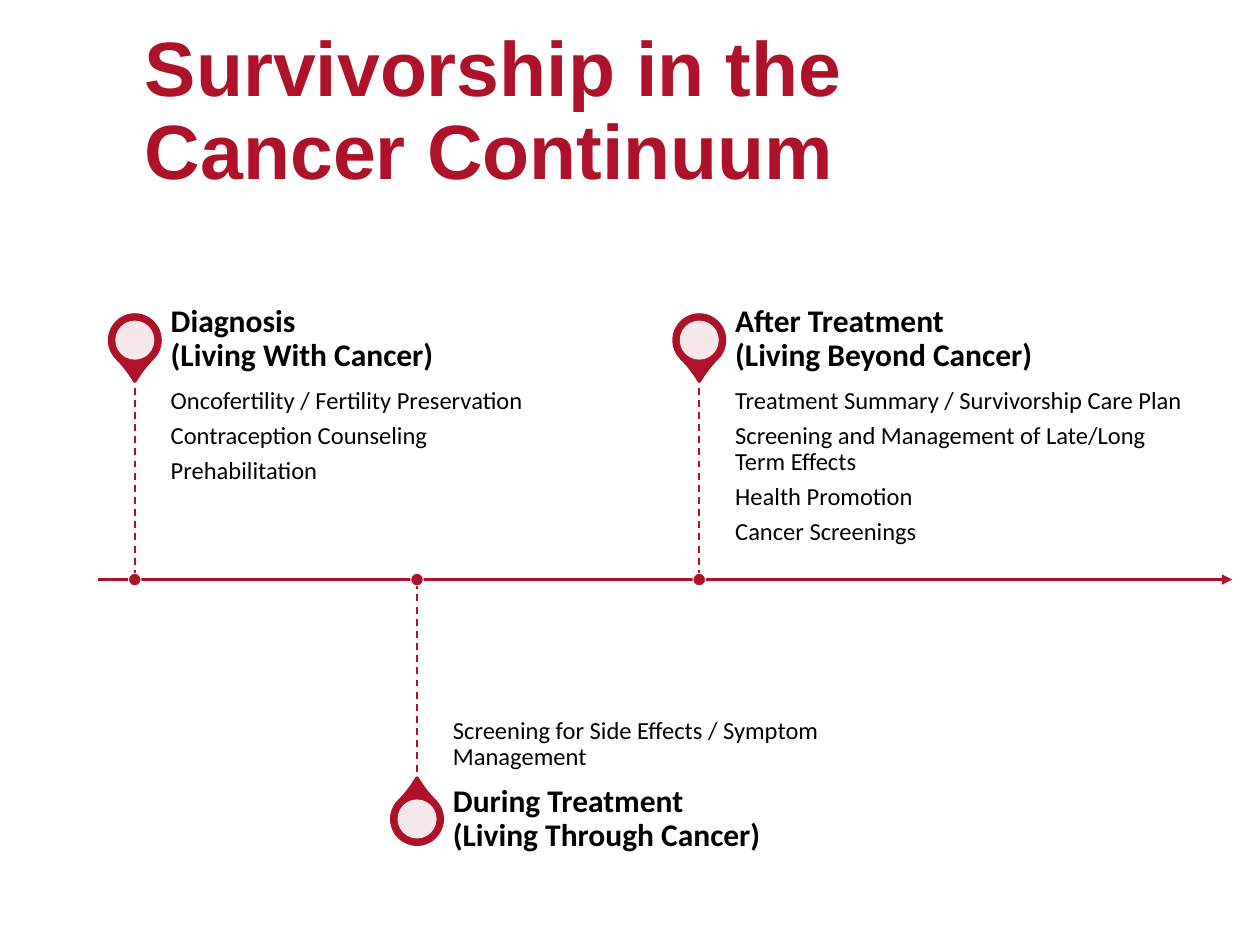
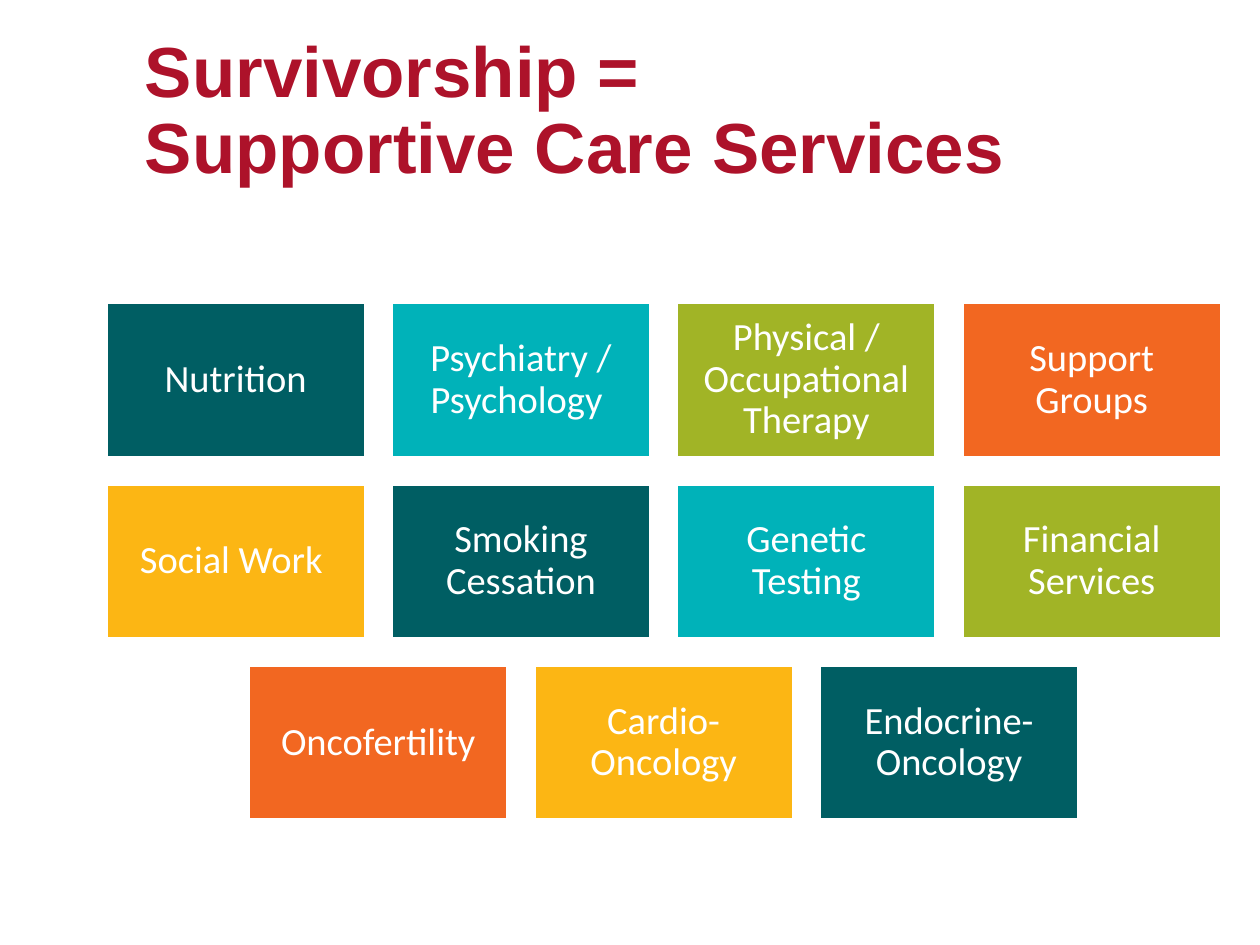
from copy import deepcopy

from lxml import etree
from pptx import Presentation
from pptx.dml.color import RGBColor
from pptx.enum.dml import MSO_LINE
from pptx.enum.shapes import MSO_CONNECTOR, MSO_SHAPE
from pptx.enum.text import MSO_ANCHOR, MSO_AUTO_SIZE, PP_ALIGN
from pptx.oxml.ns import qn
from pptx.util import Inches, Pt

RED = RGBColor(0xAD, 0x12, 0x2A)
WHITE = RGBColor(0xFF, 0xFF, 0xFF)
BLACK = RGBColor(0, 0, 0)
TEAL = RGBColor(0x00, 0x5E, 0x63)
CYAN = RGBColor(0x00, 0xB2, 0xB9)
GREEN = RGBColor(0xA1, 0xB4, 0x26)
ORANGE = RGBColor(0xF2, 0x67, 0x21)
YELLOW = RGBColor(0xFC, 0xB6, 0x14)
TINTS = [TEAL, CYAN, GREEN, ORANGE, YELLOW]

DASH = MSO_LINE.DASH
STRAIGHT = MSO_CONNECTOR.STRAIGHT
RECT, OVAL, TEAR = MSO_SHAPE.RECTANGLE, MSO_SHAPE.OVAL, MSO_SHAPE.TEAR
TOP, MIDDLE, BOTTOM = MSO_ANCHOR.TOP, MSO_ANCHOR.MIDDLE, MSO_ANCHOR.BOTTOM
LEFT, CENTER = PP_ALIGN.LEFT, PP_ALIGN.CENTER

AXIS = 4.6
FIRST, STEP = 1.07, 2.24
STEM, HEAD, WIDE = 1.62, 0.57, 3.74
STAGES = [
    ("Diagnosis\v(Living With Cancer)",
     ["Oncofertility / Fertility Preservation", "Contraception Counseling",
      "Prehabilitation"]),
    ("During Treatment \v(Living Through Cancer)",
     ["Screening for Side Effects / Symptom Management"]),
    ("After Treatment \v(Living Beyond Cancer)",
     ["Treatment Summary / Survivorship Care Plan",
      "Screening and Management of Late/Long Term Effects",
      "Health Promotion", "Cancer Screenings"]),
]

COL, ROW = 2.265, 1.44
TILE = (2.06, 1.23)
SERVICES = [
    ["Nutrition", "Psychiatry / Psychology ", "Physical / Occupational Therapy",
     "Support Groups"],
    ["Social Work ", "Smoking Cessation", "Genetic Testing",
     "Financial Services"],
    ["Oncofertility", "Cardio-Oncology", "Endocrine-Oncology"],
]


def write(frame, text, size, color, font="Calibri", bold=False, align=LEFT,
          anchor=TOP, inset=(0, 0, 0, 0), after=0.35):
    frame.text = text
    frame.word_wrap = True
    frame.auto_size = MSO_AUTO_SIZE.NONE
    frame.vertical_anchor = anchor
    (frame.margin_left, frame.margin_top,
     frame.margin_right, frame.margin_bottom) = map(Inches, inset)
    for para in frame.paragraphs:
        para.alignment = align
        para.line_spacing = 0.9
        para.space_after = Pt(size * after)
        for run in para.runs:
            run.font.name = font
            run.font.size = Pt(size)
            run.font.bold = bold
            run.font.color.rgb = color
        for gap in para._p.findall(qn("a:br")):
            gap.append(deepcopy(para.runs[0].font._element))


def new_slide(deck, title, size, width, height):
    slide = deck.slides.add_slide(deck.slide_layouts[5])
    head = slide.shapes.title
    head.left, head.top = Inches(1.05), Inches(0.43)
    head.width, head.height = Inches(width), Inches(height)
    write(head.text_frame, title, size, RED, "Arial", True, anchor=BOTTOM,
          inset=(0.1, 0, 0.1, 0), after=0)
    return slide


def add_box(slide, x, y, width, height, text, size, **style):
    box = slide.shapes.add_textbox(*map(Inches, (x, y, width, height)))
    write(box.text_frame, text, size, BLACK, **style)


def add_form(slide, kind, x, y, width, height, fill, edge=None, weight=1):
    form = slide.shapes.add_shape(kind, *map(Inches, (x, y, width, height)))
    form.shadow.inherit = False
    form.fill.solid()
    form.fill.fore_color.rgb = fill
    if edge is None:
        form.line.fill.background()
    else:
        form.line.color.rgb = edge
        form.line.width = Pt(weight)
    return form


def add_round(slide, kind, x, y, size, *paint):
    return add_form(slide, kind, x - size / 2, y - size / 2, size, size, *paint)


def add_line(slide, x1, y1, x2, y2, weight):
    line = slide.shapes.add_connector(STRAIGHT, *map(Inches, (x1, y1, x2, y2)))
    line.line.color.rgb = RED
    line.line.width = Pt(weight)
    etree.SubElement(line._element.spPr, qn("a:effectLst"))
    return line


def add_pin(slide, x, y, turn):
    drop = add_round(slide, TEAR, x, y, 0.4, RED, RED, 2)
    drop.adjustments[0] = 1.15
    drop.rotation = turn
    eye = add_round(slide, OVAL, x, y, 0.31, WHITE)
    color = eye.fill._xPr.find(".//" + qn("a:srgbClr"))
    etree.SubElement(color, qn("a:alpha")).set("val", "90000")


def add_stage(slide, x, name, items, above):
    side = -1 if above else 1
    tip = AXIS + side * STEM
    add_pin(slide, x, AXIS + side * 1.9, 135 if above else 315)
    left = x + 0.285
    add_box(slide, left, min(tip, AXIS), WIDE, STEM, "\n".join(items), 14,
            anchor=TOP if above else BOTTOM,
            inset=(0, 0.1, 0.1, 0.15) if above else (0, 0.15, 0, 0.1))
    add_box(slide, left, tip - HEAD if above else tip, WIDE, HEAD, name, 18,
            bold=True, anchor=MIDDLE, inset=(0, 0, 0.12, 0))
    add_line(slide, x, tip, x, AXIS, 1).line.dash_style = DASH
    add_round(slide, OVAL, x, AXIS, 0.1, RED, WHITE, 0.5)


def add_tile(slide, col, row, text, fill):
    tile = add_form(slide, RECT, 0.84 + col * COL, 2.4 + row * ROW, *TILE,
                    fill, WHITE, 2)
    write(tile.text_frame, text, 22, WHITE, align=CENTER, anchor=MIDDLE,
          inset=(0.09,) * 4)


def show_stages(deck):
    slide = new_slide(deck, "Survivorship in the \vCancer Continuum",
                      44, 8.89, 1.13)
    axis = add_line(slide, 0.78, AXIS, 9.78, AXIS, 1.5)
    tail = etree.SubElement(axis.line._get_or_add_ln(), qn("a:tailEnd"))
    tail.set("type", "triangle")
    for i, (name, items) in enumerate(STAGES):
        add_stage(slide, FIRST + i * STEP, name, items, i % 2 == 0)


def show_care(deck):
    slide = new_slide(deck, "Survivorship = \vSupportive Care Services",
                      40.5, 8.44, 1.07)
    most = len(SERVICES[0])
    for row, names in enumerate(SERVICES):
        shift = (most - len(names)) / 2
        for col, name in enumerate(names):
            tint = TINTS[(row * most + col) % len(TINTS)]
            add_tile(slide, col + shift, row, name, tint)


def main():
    deck = Presentation()
    deck.slide_width, deck.slide_height = Inches(10), Inches(7.5)
    show_stages(deck)
    show_care(deck)
    deck.save("out.pptx")


if __name__ == "__main__":
    main()
